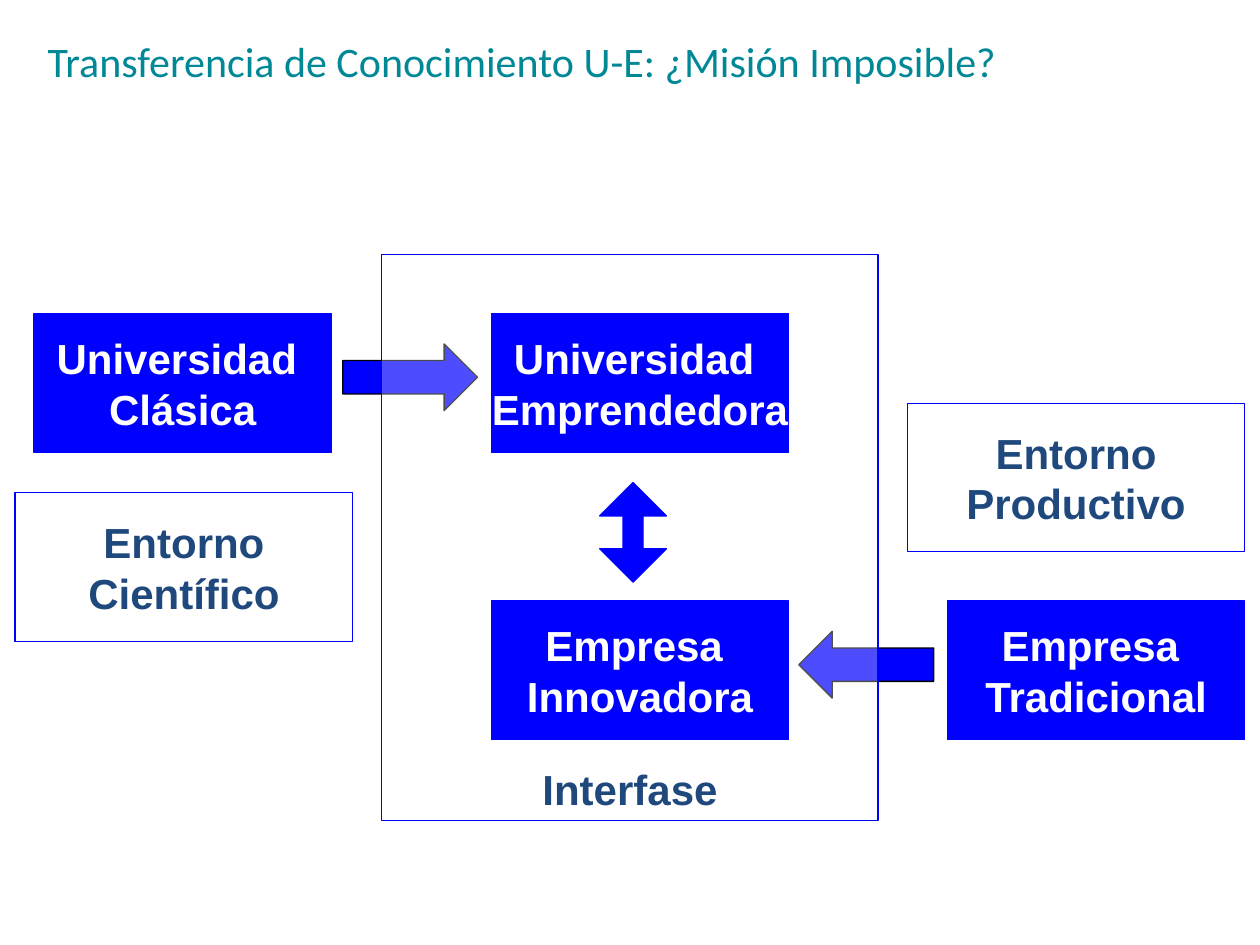
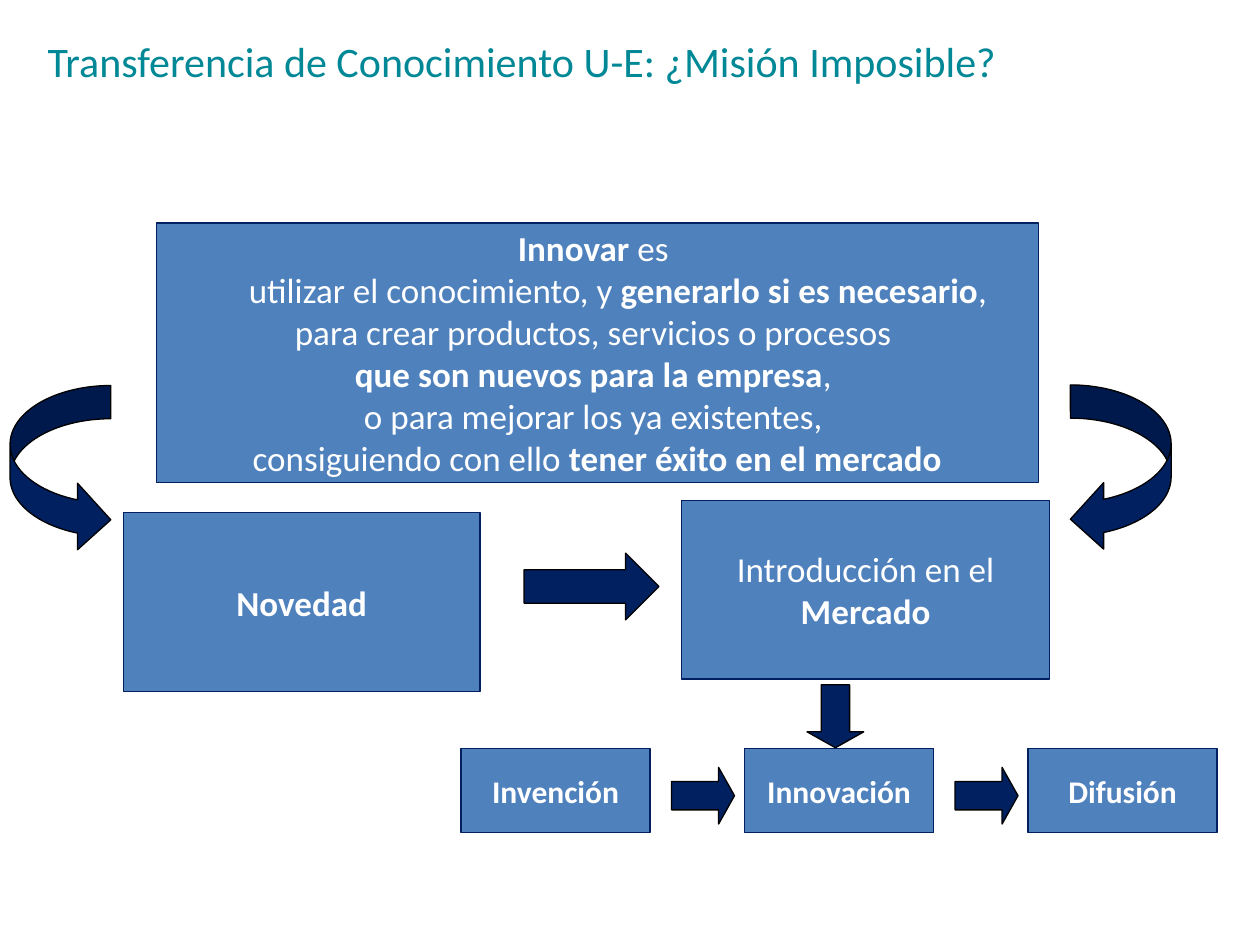
from dataclasses import dataclass

from lxml.etree import SubElement
from pptx import Presentation
from pptx.dml.color import RGBColor
from pptx.enum.shapes import MSO_SHAPE
from pptx.enum.text import MSO_ANCHOR, PP_ALIGN
from pptx.oxml.ns import qn
from pptx.util import Inches, Pt


@dataclass(frozen=True)
class Theme:
    title: str = "008896"
    blue: str = "0000FF"
    slate: str = "1F497D"
    steel: str = "4F81BD"
    navy: str = "002060"
    white: str = "FFFFFF"
    black: str = "000000"
    diagram_font: str = "Arial"
    text_font: str = "Calibri"
    large: int = 24
    medium: int = 20
    small: int = 18
    line_width: float = 0.75
    veil_opacity: int = 30


THEME = Theme()
TITLE = "Transferencia de Conocimiento U-E: ¿Misión Imposible?"
BLOCK_ARROW = (0.5, 0.5)
SHORT_ARROW = (0.5, 0.28)
CURVED_ARROW = (0.33, 0.66, 0.33)


def add_run(paragraph, text, font, size, color, bold=False):
    run = paragraph.add_run()
    run.text = text
    run.font.name = font
    run.font.size = Pt(size)
    run.font.bold = bold
    run.font.color.rgb = RGBColor.from_string(color)


def add_title(slide):
    frame = slide.shapes.add_textbox(*map(Inches, (0.28, 0.21, 8.03, 0.55))).text_frame
    frame.word_wrap = True
    frame.vertical_anchor = MSO_ANCHOR.MIDDLE
    add_run(frame.paragraphs[0], TITLE, THEME.text_font, THEME.large, THEME.title)


def add_figure(slide, kind, bounds, fill, line):
    figure = slide.shapes.add_shape(kind, *map(Inches, bounds))
    figure.shadow.inherit = False
    figure.fill.solid()
    figure.fill.fore_color.rgb = RGBColor.from_string(fill)
    figure.line.color.rgb = RGBColor.from_string(line)
    figure.line.width = Pt(THEME.line_width)
    return figure


def add_arrow(slide, kind, bounds, proportions, fill, line=THEME.black, rotation=0):
    arrow = add_figure(slide, kind, bounds, fill, line)
    arrow.rotation = rotation
    for index, value in enumerate(proportions):
        arrow.adjustments[index] = value


def add_box(slide, bounds, lines, fill, line, font, size, color):
    """Each line is a list of (text, bold) runs."""
    box = add_figure(slide, MSO_SHAPE.RECTANGLE, bounds, fill, line)
    frame = box.text_frame
    frame.word_wrap = False
    frame.vertical_anchor = MSO_ANCHOR.MIDDLE
    for index, runs in enumerate(lines):
        paragraph = frame.add_paragraph() if index else frame.paragraphs[0]
        paragraph.alignment = PP_ALIGN.CENTER
        for text, bold in runs:
            add_run(paragraph, text, font, size, color, bold)
    return box


def add_actor(slide, left, top, *words):
    add_box(slide, (left, top, 2.36, 1.1), [[(word, True)] for word in words],
            THEME.blue, THEME.blue, THEME.diagram_font, THEME.large, THEME.white)


def add_setting(slide, bounds, *words):
    """Outlined box with a translucent white fill."""
    setting = add_box(slide, bounds, [[(word, True)] for word in words],
                      THEME.white, THEME.blue, THEME.diagram_font, THEME.large, THEME.slate)
    color = setting.fill._xPr.find(qn("a:solidFill"))[0]
    SubElement(color, qn("a:alpha"), val=str(THEME.veil_opacity * 1000))
    return setting


def add_concept(slide, bounds, lines, size=THEME.medium):
    return add_box(slide, bounds, lines, THEME.steel, THEME.navy,
                   THEME.text_font, size, THEME.white)


def build_interface_slide(slide):
    add_title(slide)
    university_top, company_top = 2.49, 4.77
    arrow_drop = 0.24

    # Outer actors and their arrows, beneath the interface frame
    add_actor(slide, 0.27, university_top, "Universidad ", "Clásica")
    add_actor(slide, 7.52, company_top, "Empresa ", "Tradicional")
    for left, top, rotation in ((2.72, university_top, 0), (6.34, company_top, 180)):
        add_arrow(slide, MSO_SHAPE.RIGHT_ARROW, (left, top + arrow_drop, 1.07, 0.53),
                  BLOCK_ARROW, THEME.blue, rotation=rotation)

    # Interface frame and the two settings
    interface = add_setting(slide, (3.03, 2.02, 3.94, 4.49), "Interfase")
    interface.text_frame.vertical_anchor = MSO_ANCHOR.BOTTOM
    add_setting(slide, (0.12, 3.91, 2.68, 1.18), "Entorno", "Científico")
    add_setting(slide, (7.2, 3.2, 2.68, 1.18), "Entorno", "Productivo")

    # Actors inside the interface
    add_actor(slide, 3.9, university_top, "Universidad ", "Emprendedora")
    add_actor(slide, 3.9, company_top, "Empresa ", "Innovadora")
    add_arrow(slide, MSO_SHAPE.UP_DOWN_ARROW, (4.76, 3.83, 0.53, 0.79),
              (0.5, 0.3), THEME.blue, THEME.blue)


def build_innovation_slide(slide):
    add_title(slide)

    # Definition
    definition = add_concept(slide, (1.24, 1.77, 7, 2.06), [
        [("Innovar", True), (" es ", False)],
        [("utilizar el conocimiento, y ", False),
         ("generarlo si es necesario", True), (", ", False)],
        [("para crear productos, servicios o procesos ", False)],
        [("que son nuevos para la empresa", True), (", ", False)],
        [("o para mejorar los ya existentes, ", False)],
        [("consiguiendo con ello ", False), ("tener éxito en el mercado", True)],
    ])
    usage = definition.text_frame.paragraphs[1]
    usage._p.get_or_add_pPr().set("marL", str(Inches(0.39)))

    # Novelty and market
    add_concept(slide, (0.98, 4.07, 2.83, 1.42), [[("Novedad", True)]])
    add_concept(slide, (5.41, 3.97, 2.92, 1.42),
                [[("Introducción en el", False)], [("Mercado", True)]])
    add_arrow(slide, MSO_SHAPE.CURVED_DOWN_ARROW, (8.23, 3.32, 1.33, 0.8),
              CURVED_ARROW, THEME.navy, rotation=90)
    add_arrow(slide, MSO_SHAPE.CURVED_RIGHT_ARROW, (0.08, 3.06, 0.8, 1.33),
              CURVED_ARROW, THEME.navy)
    add_arrow(slide, MSO_SHAPE.RIGHT_ARROW, (4.16, 4.39, 1.07, 0.53),
              BLOCK_ARROW, THEME.navy)

    # Stages from invention to diffusion
    stage_left, stage_step = 3.66, 2.25
    stages = ("Invención", "Innovación", "Difusión")
    for index, stage in enumerate(stages):
        left = stage_left + index * stage_step
        add_concept(slide, (left, 5.94, 1.5, 0.67), [[(stage, True)]], THEME.small)
    stage_arrows = [(stage_left + 1.67 + index * stage_step, 6.09, 0)
                    for index in range(len(stages) - 1)]
    for left, top, rotation in [(6.38, 5.46, 90)] + stage_arrows:
        add_arrow(slide, MSO_SHAPE.RIGHT_ARROW, (left, top, 0.5, 0.45),
                  SHORT_ARROW, THEME.navy, rotation=rotation)


def main():
    presentation = Presentation()
    presentation.slide_width = Inches(10)
    presentation.slide_height = Inches(7.5)
    blank = presentation.slide_layouts[6]
    for build in (build_interface_slide, build_innovation_slide):
        build(presentation.slides.add_slide(blank))
    presentation.save("out.pptx")


if __name__ == "__main__":
    main()
